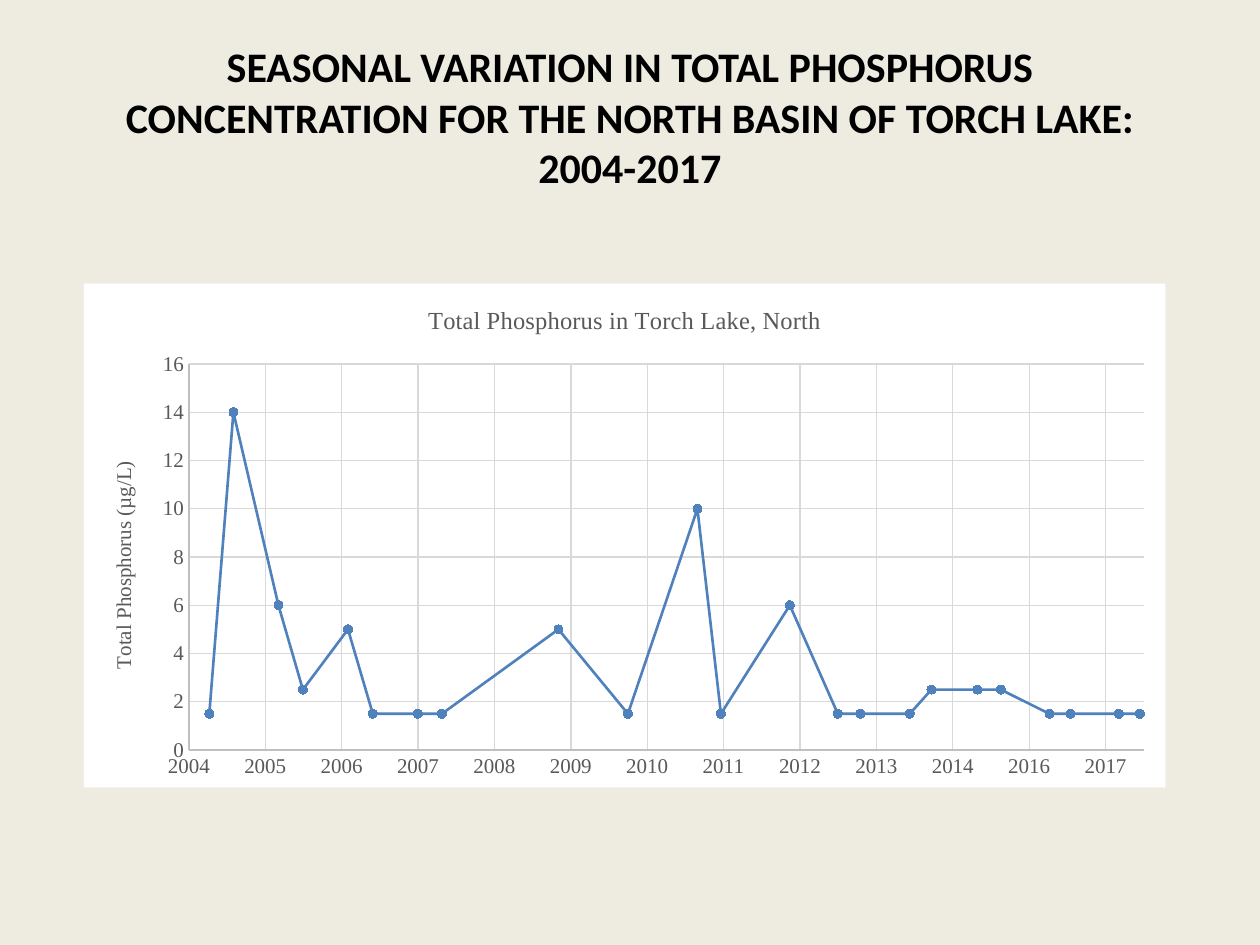
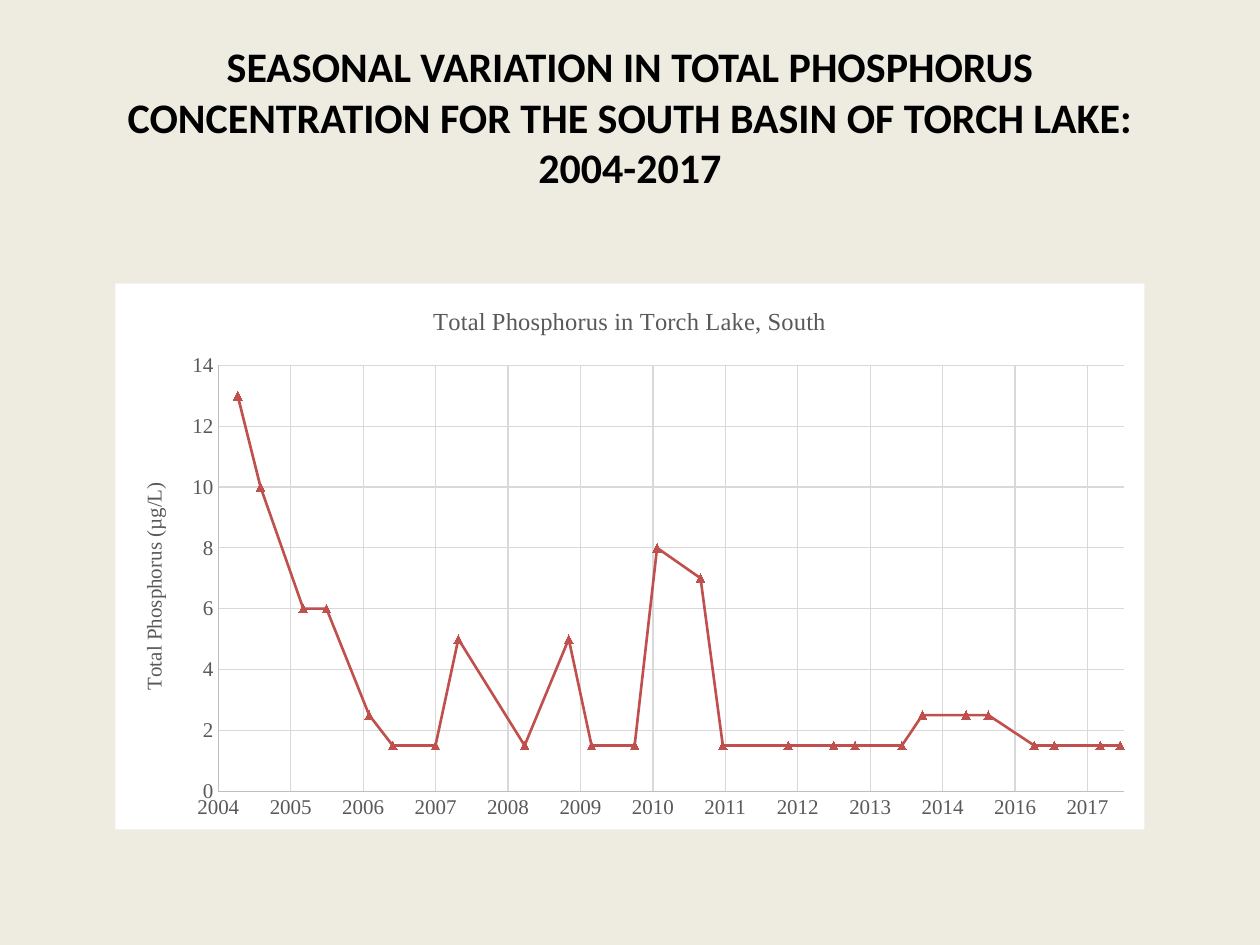
from dataclasses import dataclass

from lxml import etree
from pptx import Presentation
from pptx.chart.axis import ValueAxis
from pptx.chart.chart import Chart
from pptx.chart.data import XyChartData
from pptx.dml.color import RGBColor
from pptx.enum.chart import XL_CHART_TYPE, XL_MARKER_STYLE, XL_TICK_MARK
from pptx.enum.text import MSO_ANCHOR, PP_ALIGN
from pptx.oxml import parse_xml
from pptx.oxml.ns import nsdecls, qn
from pptx.slide import Slide
from pptx.text.text import Font, TextFrame
from pptx.util import Pt


@dataclass(frozen=True)
class Theme:
    background: RGBColor = RGBColor(0xEE, 0xEC, 0xE1)
    title: RGBColor = RGBColor(0, 0, 0)
    label: RGBColor = RGBColor(0x59, 0x59, 0x59)
    axis: RGBColor = RGBColor(0xBF, 0xBF, 0xBF)
    grid: RGBColor = RGBColor(0xD9, 0xD9, 0xD9)
    north: RGBColor = RGBColor(0x4F, 0x81, 0xBD)
    south: RGBColor = RGBColor(0xC0, 0x50, 0x4D)
    chart_fill: str = "FFFFFF"
    title_font: str = "Calibri"
    chart_font: str = "Times New Roman"
    title_size: Pt = Pt(24)
    chart_title_size: Pt = Pt(14)
    label_size: Pt = Pt(12)


THEME = Theme()


@dataclass(frozen=True)
class Box:
    left: float
    top: float
    width: float
    height: float


@dataclass(frozen=True)
class Basin:
    name: str
    chart_box: Box
    plot_box: Box
    maximum: int
    color: RGBColor
    marker: XL_MARKER_STYLE
    readings: list[tuple[int, float]]


TITLE_BOX = Box(36, 21.6, 648, 90)

SAMPLES = [
    (38107, 1.5, 13), (38233, 14, 10), (38469, 6, 6), (38597, 2.5, 6),
    (38833, 5, 2.5), (38963, 1.5, 1.5), (39199, 1.5, 1.5), (39325, 1.5, 5),
    (39691, None, 1.5), (39935, 5, 5), (40061, None, 1.5), (40299, 1.5, 1.5),
    (40423, None, 8), (40663, 10, 7), (40786, 1.5, 1.5), (41147, 6, 1.5),
    (41398, 1.5, 1.5), (41516, 1.5, 1.5), (41775, 1.5, 1.5), (41888, 2.5, 2.5),
    (42129, 2.5, 2.5), (42252, 2.5, 2.5), (42506, 1.5, 1.5), (42616, 1.5, 1.5),
    (42870, 1.5, 1.5), (42980, 1.5, 1.5),
]

BASINS = [
    Basin("North", Box(48, 162, 618, 288), Box(0.097, 0.16, 0.883, 0.766), 16,
          THEME.north, XL_MARKER_STYLE.CIRCLE,
          [(day, north) for day, north, _ in SAMPLES if north is not None]),
    Basin("South", Box(66, 162, 588, 312), Box(0.1, 0.15, 0.88, 0.78), 14,
          THEME.south, XL_MARKER_STYLE.TRIANGLE,
          [(day, south) for day, _, south in SAMPLES]),
]


def lengths(box: Box) -> tuple[Pt, Pt, Pt, Pt]:
    return Pt(box.left), Pt(box.top), Pt(box.width), Pt(box.height)


def style_font(font: Font, name: str, size: Pt, color: RGBColor, bold: bool = False) -> None:
    font.name = name
    font.size = size
    font.bold = bold
    font.color.rgb = color


def style_label(frame: TextFrame, text: str, size: Pt) -> None:
    frame.text = text
    style_font(frame.paragraphs[0].font, THEME.chart_font, size, THEME.label)


def add_title(slide: Slide, text: str) -> None:
    frame = slide.shapes.add_textbox(*lengths(TITLE_BOX)).text_frame
    frame.word_wrap = True
    frame.vertical_anchor = MSO_ANCHOR.MIDDLE
    paragraph = frame.paragraphs[0]
    paragraph.text = text
    paragraph.alignment = PP_ALIGN.CENTER
    style_font(paragraph.font, THEME.title_font, THEME.title_size, THEME.title, bold=True)


def style_axis(axis: ValueAxis, minimum: int, maximum: int, step: int, number_format: str) -> None:
    axis.minimum_scale = minimum
    axis.maximum_scale = maximum
    axis.major_unit = step
    axis.major_tick_mark = axis.minor_tick_mark = XL_TICK_MARK.NONE
    axis.has_major_gridlines = True
    for line, color in ((axis.format.line, THEME.axis),
                        (axis.major_gridlines.format.line, THEME.grid)):
        line.color.rgb = color
        line.width = Pt(0.75)
    labels = axis.tick_labels
    labels.number_format = number_format
    labels.number_format_is_linked = False
    style_font(labels.font, THEME.chart_font, THEME.label_size, THEME.label)


def fill_chart(chart: Chart) -> None:
    chart_space = chart.element
    chart_space.find(qn("c:chart")).addnext(parse_xml(
        f'<c:spPr {nsdecls("c", "a")}><a:solidFill><a:srgbClr val="{THEME.chart_fill}"/>'
        "</a:solidFill><a:ln><a:noFill/></a:ln></c:spPr>"))


def place_plot(chart: Chart, box: Box) -> None:
    plot_area = chart.element.find(qn("c:chart")).find(qn("c:plotArea"))
    for layout in plot_area.findall(qn("c:layout")):
        plot_area.remove(layout)
    layout = parse_xml(f'<c:layout {nsdecls("c")}/>')
    manual = etree.SubElement(layout, qn("c:manualLayout"))
    settings = {"layoutTarget": "inner", "xMode": "edge", "yMode": "edge",
                "x": box.left, "y": box.top, "w": box.width, "h": box.height}
    for tag, value in settings.items():
        etree.SubElement(manual, qn(f"c:{tag}")).set("val", str(value))
    plot_area.insert(0, layout)


def add_phosphorus_chart(slide: Slide, basin: Basin) -> None:
    data = XyChartData()
    points = data.add_series("Series 1")
    for day, value in basin.readings:
        points.add_data_point(day, value)
    chart = slide.shapes.add_chart(
        XL_CHART_TYPE.XY_SCATTER_SMOOTH, *lengths(basin.chart_box), data).chart
    style_font(chart.font, THEME.chart_font, THEME.label_size, THEME.title)
    fill_chart(chart)
    place_plot(chart, basin.plot_box)
    chart.has_legend = False
    chart.has_title = True
    chart.chart_title.include_in_layout = False
    style_label(chart.chart_title.text_frame,
                f"Total Phosphorus in Torch Lake, {basin.name}", THEME.chart_title_size)
    style_axis(chart.category_axis, 38000, 43000, 400, "yyyy")
    style_axis(chart.value_axis, 0, basin.maximum, 2, "General")
    style_label(chart.value_axis.axis_title.text_frame,
                "Total Phosphorus (µg/L)", THEME.label_size)
    plot = chart.plots[0]
    plot.vary_by_categories = False
    series = plot.series[0]
    series.smooth = True
    series.format.line.color.rgb = basin.color
    series.format.line.width = Pt(1.5)
    marker = series.marker
    marker.style = basin.marker
    marker.size = 5
    marker.format.fill.solid()
    marker.format.fill.fore_color.rgb = basin.color
    marker.format.line.color.rgb = basin.color


def main() -> None:
    presentation = Presentation()
    presentation.slide_width, presentation.slide_height = Pt(720), Pt(540)
    for basin in BASINS:
        slide = presentation.slides.add_slide(presentation.slide_layouts[6])
        slide.background.fill.solid()
        slide.background.fill.fore_color.rgb = THEME.background
        add_title(slide, "SEASONAL VARIATION IN TOTAL PHOSPHORUS CONCENTRATION FOR THE "
                         f"{basin.name.upper()} BASIN OF TORCH LAKE: 2004-2017")
        add_phosphorus_chart(slide, basin)
    presentation.save("out.pptx")


if __name__ == "__main__":
    main()
